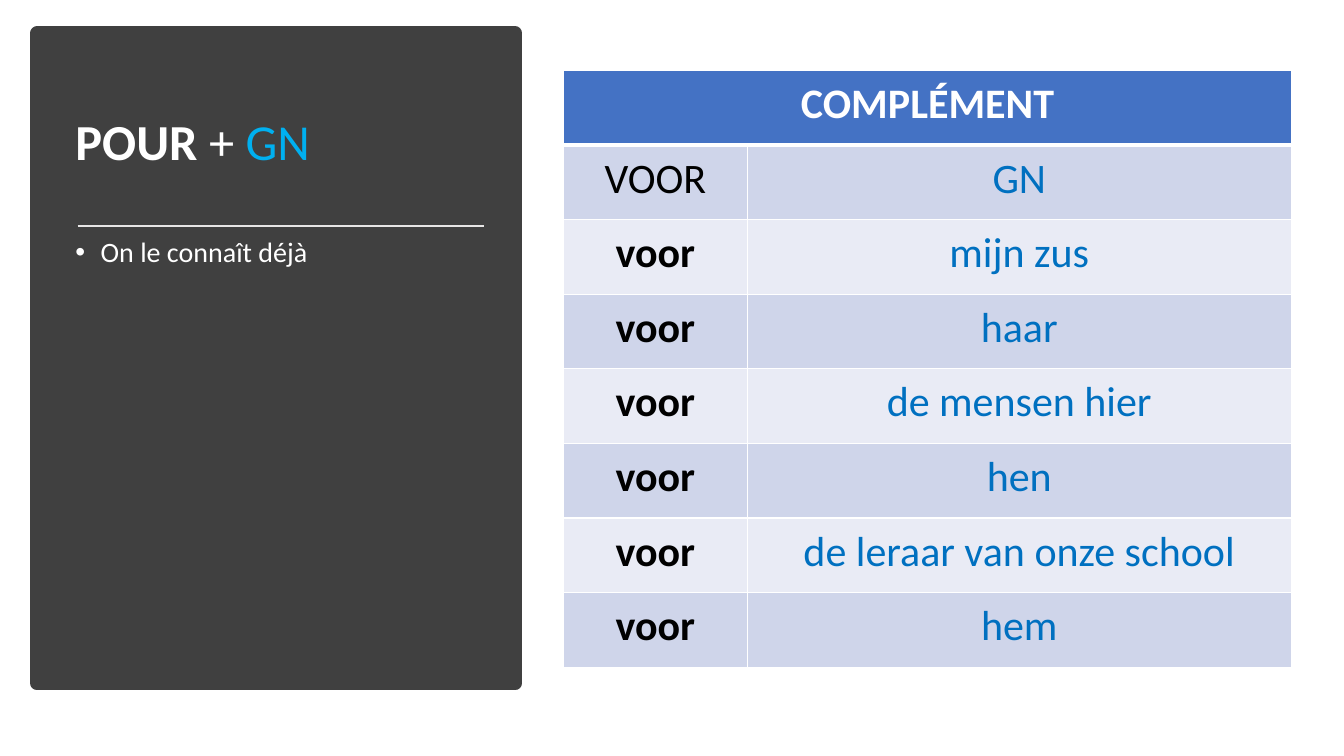
from lxml import etree
from pptx import Presentation
from pptx.dml.color import RGBColor
from pptx.enum.shapes import MSO_CONNECTOR, MSO_SHAPE
from pptx.enum.text import MSO_ANCHOR, PP_ALIGN
from pptx.oxml.ns import qn
from pptx.util import Inches, Pt

RECTANGLE, STRAIGHT = MSO_SHAPE.RECTANGLE, MSO_CONNECTOR.STRAIGHT
TOP, MIDDLE = MSO_ANCHOR.TOP, MSO_ANCHOR.MIDDLE
LEFT, CENTER = PP_ALIGN.LEFT, PP_ALIGN.CENTER

# Content
TITLE = [("POUR", "white", True), (" + ", "white", False), ("GN", "sky", False)]
POINT = "On le connaît déjà"
HEADING = "COMPLÉMENT"
ROWS = [
    ("VOOR", "GN"),
    ("voor", "mijn zus"),
    ("voor", "haar"),
    ("voor", "de mensen hier"),
    ("voor", "hen"),
    ("voor", "de leraar van onze school"),
    ("voor", "hem"),
]

# Style and layout, in inches and points
FONT = "Calibri"
COLORS = {
    "panel": "404040", "rule": "E7E6E6", "white": "FFFFFF", "black": "000000",
    "sky": "00B0F0", "blue": "0070C0", "header": "4472C4",
    "dark band": "CFD5EA", "light band": "E9EBF5",
}
SIZE = (13.33, 7.5)
PANEL = (0.37, 0.33, 4.74, 6.45)
TITLE_BOX = (0.65, 0.7, 4.18, 1.47)
BODY_BOX = (0.65, 2.32, 4.18, 4.13)
RULE = (0.77, 2.24, 4.8, 2.24)
TABLE_AT = (5.59, 0.7)
COLUMNS = (1.82, 5.4)
ROW_HEIGHT = 0.74
CELL_MARGINS = {"margin_left": 0.17, "margin_right": 0.17,
                "margin_top": 0.08, "margin_bottom": 0.08}


def color(name):
    return RGBColor.from_string(COLORS[name])


def inches(lengths):
    return [Inches(length) for length in lengths]


def paint(part, name):
    part.fill.solid()
    part.fill.fore_color.rgb = color(name)


def draw_line(line, name, width):
    line.color.rgb = color(name)
    line.width = Pt(width)


def write(frame, spans, size, align=LEFT, **spacing):
    para = frame.paragraphs[0]
    para.alignment = align
    for key, value in spacing.items():
        setattr(para, key, value)
    for text, ink, bold in spans:
        span = para.add_run()
        span.text = text
        span.font.color.rgb = color(ink)
        for key, value in {"name": FONT, "size": Pt(size), "bold": bold}.items():
            setattr(span.font, key, value)
    return para


def add_text(page, place, spans, size, anchor, **spacing):
    frame = page.shapes.add_textbox(*inches(place)).text_frame
    frame.word_wrap = True
    frame.vertical_anchor = anchor
    return write(frame, spans, size, line_spacing=0.9, **spacing)


def add_bullet(para, indent):
    properties = para._p.get_or_add_pPr()
    properties.set("marL", str(Inches(indent)))
    properties.set("indent", str(-Inches(indent)))
    etree.SubElement(properties, qn("a:buFont"), typeface="Arial")
    etree.SubElement(properties, qn("a:buChar"), char="•")


def add_borders(cell, widths):
    properties = cell._tc.get_or_add_tcPr()
    for side, width in widths.items():
        border = etree.SubElement(properties, qn(f"a:ln{side}"), w=str(Pt(width)))
        fill = etree.SubElement(border, qn("a:solidFill"))
        etree.SubElement(fill, qn("a:srgbClr"), val=COLORS["white"])


def add_panel(page):
    panel = page.shapes.add_shape(RECTANGLE, *inches(PANEL))
    panel.shadow.inherit = False
    paint(panel, "panel")
    draw_line(panel.line, "panel", 10)
    add_text(page, TITLE_BOX, TITLE, 36, MIDDLE)
    rule = page.shapes.add_connector(STRAIGHT, *inches(RULE))
    draw_line(rule.line, "rule", 1.75)
    etree.SubElement(rule._element.spPr, qn("a:effectLst"))
    point = add_text(page, BODY_BOX, [(POINT, "white", False)], 20, TOP,
                     space_before=Pt(10))
    add_bullet(point, 0.25)


def add_complement_table(page):
    count = len(ROWS) + 1
    area = (*TABLE_AT, sum(COLUMNS), ROW_HEIGHT * count)
    table = page.shapes.add_table(count, len(COLUMNS), *inches(area)).table
    for column, width in zip(table.columns, COLUMNS):
        column.width = Inches(width)
    for row in table.rows:
        row.height = Inches(ROW_HEIGHT)
    table.cell(0, 0).merge(table.cell(0, 1))

    for r, texts in enumerate([(HEADING, ""), *ROWS]):
        band = "header" if r == 0 else "dark band" if r % 2 else "light band"
        for c, text in enumerate(texts):
            cell = table.cell(r, c)
            for key, value in CELL_MARGINS.items():
                setattr(cell, key, Inches(value))
            add_borders(cell, {"L": 1, "R": 1, "T": 3 if r == 1 else 1,
                               "B": 3 if r == 0 else 1})
            paint(cell, band)
            if text:
                ink = "white" if r == 0 else ("black", "blue")[c]
                bold = c == 0 and r != 1
                write(cell.text_frame, [(text, ink, bold)], 30, CENTER)


def main():
    deck = Presentation()
    deck.slide_width, deck.slide_height = inches(SIZE)
    page = deck.slides.add_slide(deck.slide_layouts[6])
    add_panel(page)
    add_complement_table(page)
    deck.save("out.pptx")


if __name__ == "__main__":
    main()
